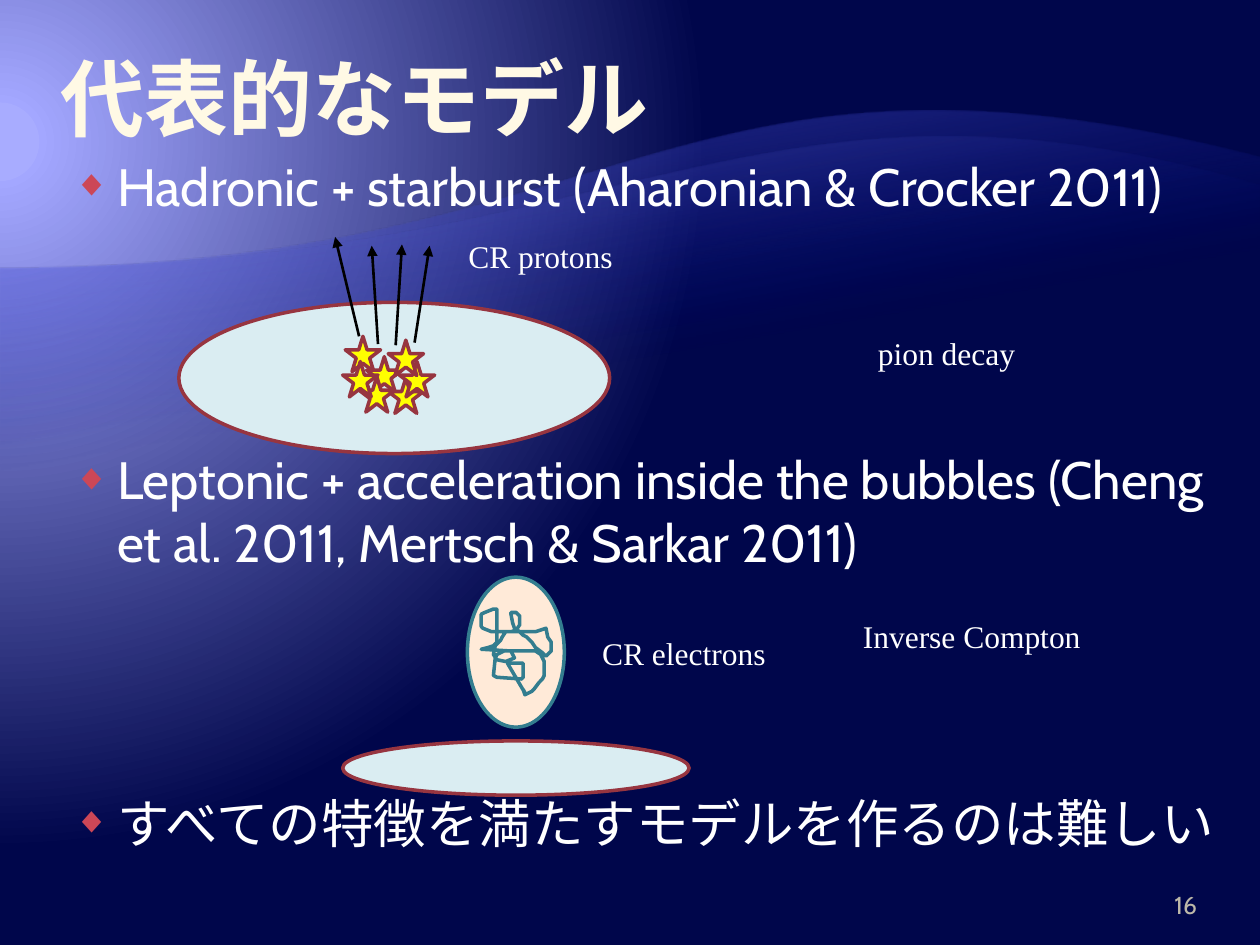
from lxml import etree
from pptx import Presentation
from pptx.dml.color import RGBColor
from pptx.enum.shapes import MSO_CONNECTOR, MSO_SHAPE
from pptx.enum.text import MSO_ANCHOR, MSO_AUTO_SIZE, PP_ALIGN
from pptx.oxml.ns import qn
from pptx.util import Pt

LEFT, RIGHT = PP_ALIGN.LEFT, PP_ALIGN.RIGHT
TOP, BOTTOM = MSO_ANCHOR.TOP, MSO_ANCHOR.BOTTOM
NO_FIT = MSO_AUTO_SIZE.NONE
ELLIPSE, STAR = MSO_SHAPE.OVAL, MSO_SHAPE.STAR_5_POINT
STRAIGHT = MSO_CONNECTOR.STRAIGHT

WHITE = RGBColor(0xFF, 0xFF, 0xFF)
BLACK = RGBColor(0x00, 0x00, 0x00)
CREAM = RGBColor(0xFF, 0xF9, 0xE5)
OLIVE = RGBColor(0x8F, 0x84, 0x62)
GREY = RGBColor(0xBD, 0xB8, 0xA9)
RED = RGBColor(0xCC, 0x47, 0x57)
MAROON = RGBColor(0x97, 0x35, 0x40)
TEAL = RGBColor(0x33, 0x7D, 0x8F)
PALE_BLUE = RGBColor(0xDA, 0xED, 0xF2)
PEACH = RGBColor(0xFF, 0xEA, 0xD8)
YELLOW = RGBColor(0xFF, 0xFF, 0x00)
NAVY = RGBColor(0x00, 0x06, 0x4B)
BLUE = RGBColor(0x00, 0x0D, 0x9E)
PERIWINKLE = RGBColor(0x79, 0x7F, 0xFF)
LAVENDER = RGBColor(0xA3, 0xA7, 0xFF)
LILAC = RGBColor(0xA8, 0xAC, 0xFF)

HEADING_FONT, LABEL_FONT = "Cabin", "Times New Roman"

STARS = [(197.3, 192.2), (209.5, 203.8), (221.8, 216), (205.2, 215.3),
         (195.8, 206.6), (228.2, 206.6), (221.8, 194.4)]
ARROWS = [((205.2, 192.2), (191.5, 135.4)), ((216, 196.6), (212.4, 140.4)),
          ((226.1, 197.3), (229.7, 139.7)), ((236.9, 195.8), (245.5, 140.4))]
LABELS = [("CR protons", 260.6, 131.8, 113), ("pion decay", 494.6, 187.2, 110.2),
          ("CR electrons", 337, 358.6, 125.3), ("Inverse Compton", 486, 349.2, 164.2)]
BULLETS = [("Hadronic + starburst (Aharonian & Crocker 2011)", 6),
           ("Leptonic + acceleration inside the bubbles "
            "(Cheng et al. 2011, Mertsch & Sarkar 2011)", 131.5),
           ("すべての特徴を満たすモデルを作るのは難しい", 124.5)]
TANGLED_FIELD = [
    (300, 396), (290, 379), (299, 379), (299, 387), (298, 388), (284, 387),
    (282, 386), (283, 376), (284, 374), (288, 372), (292, 372), (294, 376),
    (289, 378), (284, 377), (282, 374), (283, 369), (286, 366), (287, 364),
    (289, 361), (306, 361), (312, 359), (313, 364), (315, 367), (315, 372),
    (312, 375), (310, 373), (306, 370), (304, 367), (301, 364), (299, 363),
    (297, 361), (294, 359), (293, 356), (292, 351), (292, 350), (295, 350),
    (297, 352), (297, 357), (295, 360), (292, 361), (281, 361), (276, 359),
    (275, 358), (275, 351), (277, 350), (282, 348), (284, 348), (284, 351),
    (284, 367), (282, 369), (279, 370), (275, 371), (292, 372), (306, 372),
    (309, 374), (311, 378), (311, 386), (310, 388), (308, 390), (305, 394),
    (304, 395), (302, 396), (300, 397), (299, 394)]


def add_node(parent, tag, **attributes):
    return etree.SubElement(parent, qn(tag), {k: str(v) for k, v in attributes.items()})


def fill_gradient(fill, properties, stops):
    fill.gradient()
    gradient = properties.find(qn("a:gradFill"))
    for child in list(gradient):
        gradient.remove(child)
    stop_list = add_node(gradient, "a:gsLst")
    for position, color, alpha in stops:
        stop = add_node(stop_list, "a:gs", pos=position * 1000)
        tint = add_node(stop, "a:srgbClr", val=color)
        if alpha < 100:
            add_node(tint, "a:alpha", val=alpha * 1000)
    return gradient


def cubic(start, first, second, end, steps=60):
    for step in range(steps + 1):
        t = step / steps
        weights = ((1 - t) ** 3, 3 * t * (1 - t) ** 2, 3 * t * t * (1 - t), t ** 3)
        yield tuple(sum(w * point[axis] for w, point in zip(weights, (start, first, second, end)))
                    for axis in (0, 1))


def write_text(frame, text, font=HEADING_FONT, size=18, color=WHITE, bold=False,
               align=LEFT, before=0, first=True):
    para = frame.paragraphs[0] if first else frame.add_paragraph()
    para.alignment, para.space_before = align, Pt(before)
    span = para.add_run()
    span.text = text
    span.font.name, span.font.size, span.font.bold = font, Pt(size), bold
    span.font.color.rgb = color
    return para


class SlideBuilder:
    def __init__(self, page, line_width=2):
        self.page = page
        self.line_width = line_width

    def background(self):
        fill = self.page.background.fill
        properties = self.page.element.find(".//" + qn("p:bgPr"))
        gradient = fill_gradient(fill, properties,
                                 [(5, LILAC, 100), (5, LAVENDER, 100), (90, NAVY, 100)])
        circle = add_node(gradient, "a:path", path="circle")
        add_node(circle, "a:fillToRect", l=20000, t=30000, r=135000, b=100000)

    def outline(self, points):
        start, *rest = [(Pt(x), Pt(y)) for x, y in points]
        pen = self.page.shapes.build_freeform(*start, scale=1.0)
        pen.add_line_segments(rest, close=True)
        shape = pen.convert_to_shape()
        shape.shadow.inherit = False
        return shape

    def wave(self, bottom, curve, color, alpha):
        shape = self.outline([(720, bottom), (0, bottom), *cubic(*curve)])
        gradient = fill_gradient(shape.fill, shape.element.spPr,
                                 [(65, BLUE, 0), (100, color, alpha)])
        add_node(gradient, "a:lin", ang=260 * 60000, scaled=0)
        shape.line.fill.background()
        self.page.shapes.title.element.addprevious(shape.element)

    def scribble(self, points, color):
        shape = self.outline(points)
        shape.fill.background()
        self.stroke(shape, color)

    def stroke(self, shape, color):
        shape.line.color.rgb = color
        shape.line.width = Pt(self.line_width)

    def shape(self, kind, left, top, width, height, fill, line):
        shape = self.page.shapes.add_shape(kind, Pt(left), Pt(top), Pt(width), Pt(height))
        shape.shadow.inherit = False
        shape.fill.solid()
        shape.fill.fore_color.rgb = fill
        self.stroke(shape, line)

    def arrow(self, start, end):
        arrow = self.page.shapes.add_connector(STRAIGHT, *map(Pt, start + end))
        arrow.line.color.rgb, arrow.line.width = BLACK, Pt(1.5)
        add_node(arrow.line._get_or_add_ln(), "a:tailEnd", type="triangle")
        add_node(arrow.element.spPr, "a:effectLst")

    def place(self, box, left, top, width, height, anchor=TOP, insets=(7.2, 3.6, 7.2, 3.6),
              wrap=True):
        box.left, box.top, box.width, box.height = map(Pt, (left, top, width, height))
        frame = box.text_frame
        frame.auto_size, frame.word_wrap, frame.vertical_anchor = NO_FIT, wrap, anchor
        (frame.margin_left, frame.margin_top,
         frame.margin_right, frame.margin_bottom) = map(Pt, insets)
        return frame

    def title(self, text):
        frame = self.place(self.page.shapes.title, 34.56, 18.72, 648, 66.24, BOTTOM,
                           (0, 0.72, 0, 0.72))
        para = write_text(frame, text, size=48, color=CREAM, bold=True)
        properties = para.runs[0].font._element
        line = etree.Element(qn("a:ln"), w=str(Pt(0.04)))
        add_node(add_node(line, "a:solidFill"), "a:srgbClr", val=OLIVE)
        properties.insert(0, line)

    def bullets(self, items):
        frame = self.place(self.page.placeholders[1], 34.56, 84.24, 685.44, 444.96)
        for index, (text, before) in enumerate(items):
            para = write_text(frame, text, size=30, before=before, first=index == 0)
            properties = para._p.get_or_add_pPr()
            properties.set("marL", str(Pt(25.2)))
            properties.set("indent", str(-Pt(25.2)))
            add_node(add_node(properties, "a:buClr"), "a:srgbClr", val=RED)
            add_node(properties, "a:buSzPct", val=70000)
            add_node(properties, "a:buChar", char="◆")

    def text(self, text, left, top, width, height=28.8, anchor=TOP,
             insets=(7.2, 3.6, 7.2, 3.6), wrap=False, **style):
        box = self.page.shapes.add_textbox(0, 0, 0, 0)
        frame = self.place(box, left, top, width, height, anchor, insets, wrap)
        write_text(frame, text, **style)


def main():
    deck = Presentation()
    deck.slide_width, deck.slide_height = Pt(720), Pt(540)
    builder = SlideBuilder(deck.slides.add_slide(deck.slide_layouts[1]))
    builder.background()
    builder.wave(527.8, ((0, 153.4), (360, 153.4), (384.5, 3.6), (720, 90)), PERIWINKLE, 55)
    builder.wave(458.6, ((0, 153.4), (360, 153.4), (430.6, 22.3), (720, 105.8)), LAVENDER, 30)
    builder.title("代表的なモデル")
    builder.bullets(BULLETS)
    builder.text("16", 642.24, 500.4, 41.76, anchor=BOTTOM, insets=(7.2, 3.6, 0, 3.6),
                 wrap=True, size=14, color=GREY, align=RIGHT)
    builder.shape(ELLIPSE, 102.2, 172.8, 246.2, 86.4, PALE_BLUE, MAROON)
    for left, top in STARS:
        builder.shape(STAR, left, top, 20.2, 20.2, YELLOW, MAROON)
    for start, end in ARROWS:
        builder.arrow(start, end)
    builder.shape(ELLIPSE, 195.8, 423.4, 198, 31, PALE_BLUE, MAROON)
    builder.shape(ELLIPSE, 267.1, 329.8, 55.4, 85.7, PEACH, TEAL)
    builder.scribble(TANGLED_FIELD, TEAL)
    for label, left, top, width in LABELS:
        builder.text(label, left, top, width, font=LABEL_FONT)
    deck.save("out.pptx")


if __name__ == "__main__":
    main()
